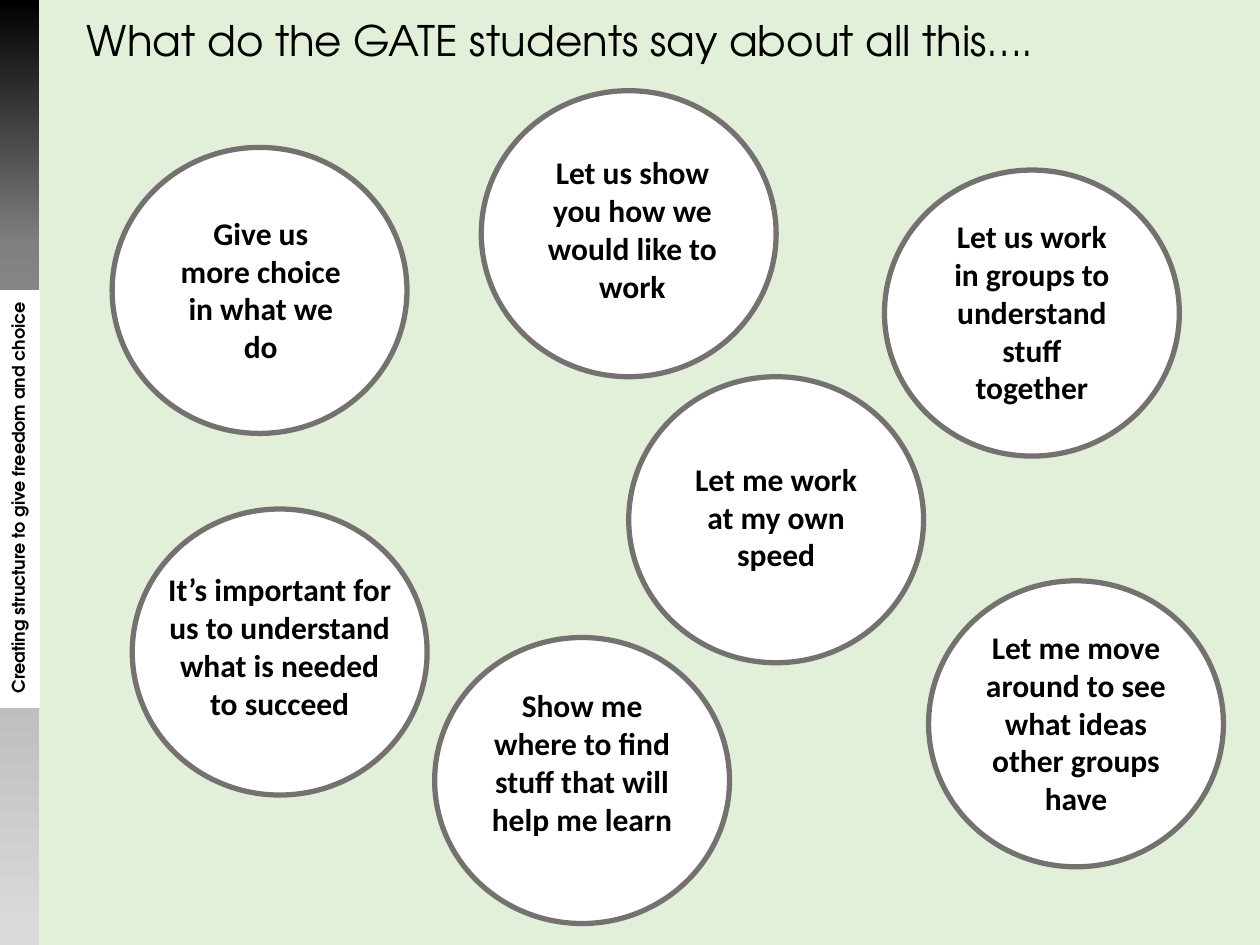
from copy import deepcopy
from dataclasses import dataclass

from pptx import Presentation
from pptx import util as u
from pptx.dml.color import RGBColor
from pptx.enum import shapes, text
from pptx.oxml.ns import qn


@dataclass(frozen=True)
class Theme:
    backdrop: str = "E2F0D9"
    paper: str = "FFFFFF"
    outline: str = "767171"
    ink: str = "000000"
    heading_font: str = "TeX Gyre Adventor"
    body_font: str = "Calibri"
    title_size: int = 24
    quote_size: int = 18
    motto_size: int = 10
    hairline: int = 1
    ring: int = 3
    strip: tuple = ((0, "000000"), (0.26, "808080"), (0.55, "A8A7A7"), (0.98, "D9D9D9"))


THEME = Theme()
COLUMNS, ROWS = 100, 75
CELL = u.Inches(0.1)
STRIP_WIDTH = 3.1
BUBBLE_WIDTH, BUBBLE_HEIGHT = 23.4, 22.7
LINE_ROWS, PADDING_ROWS = 3.05, 0.95

# bubble column, bubble row, text width, line count, text shift (columns, rows), words
QUOTES = [
    (8.9, 11.7, 15.4, 4, (0.1, 0), "Give us more choice in what we do"),
    (10.5, 40.4, 20.5, 4, (0, -0.4), "It’s important for us to understand what is needed to succeed"),
    (38.2, 7.2, 15.4, 4, (0.3, -0.3), "Let us show you how we would like to work"),
    (70.2, 13.5, 15.4, 5, (0, 0), "Let us work in groups to understand stuff together"),
    (49.9, 29.9, 15.4, 3, (0, -0.2), "Let me work at my own speed"),
    (34.5, 50.6, 17.6, 4, (0, -1.4), "Show me where to find stuff that will help me learn"),
    (73.7, 46.1, 16.7, 5, (0, 0), "Let me move around to see what ideas other groups have"),
]


def rgb(code):
    return RGBColor.from_string(code)


def cells(*counts):
    return [round(count * CELL) for count in counts]


def add_panel(page, kind, place, fill=None, line=None, weight=0):
    panel = page.shapes.add_shape(kind, *cells(*place))
    panel.shadow.inherit = False
    if fill:
        panel.fill.solid()
        panel.fill.fore_color.rgb = rgb(fill)
    if line:
        panel.line.color.rgb = rgb(line)
        panel.line.width = u.Pt(weight)
    else:
        panel.line.fill.background()
    return panel


def shade_downwards(panel, stops):
    panel.fill.gradient()
    panel.fill.gradient_angle = 270
    stop_list = panel.element.spPr.find(qn("a:gradFill")).find(qn("a:gsLst"))
    while len(stop_list) < len(stops):
        stop_list.append(deepcopy(stop_list[0]))
    for stop, (position, code) in zip(panel.fill.gradient_stops, stops):
        stop.position = position
        stop.color.rgb = rgb(code)


def add_words(page, words, place, font, size, bold=False, align=None, rotation=0):
    box = page.shapes.add_textbox(*cells(*place))
    box.rotation = rotation
    frame = box.text_frame
    frame.word_wrap = True
    frame.auto_size = text.MSO_AUTO_SIZE.SHAPE_TO_FIT_TEXT
    para = frame.paragraphs[0]
    para.text = words
    para.alignment = align
    para.font.name = font
    para.font.size = u.Pt(size)
    para.font.bold = bold
    para.font.color.rgb = rgb(THEME.ink)


def add_quote(page, column, row, width, lines, shift, words):
    add_panel(page, shapes.MSO_SHAPE.OVAL, (column, row, BUBBLE_WIDTH, BUBBLE_HEIGHT),
              THEME.paper, THEME.outline, THEME.ring)
    height = lines * LINE_ROWS + PADDING_ROWS
    left = column + (BUBBLE_WIDTH - width) / 2 + shift[0]
    top = row + (BUBBLE_HEIGHT - height) / 2 + shift[1]
    add_words(page, words, (left, top, width, height), THEME.body_font,
              THEME.quote_size, True, text.PP_ALIGN.CENTER)


def add_sidebar(page):
    rectangle = shapes.MSO_SHAPE.RECTANGLE
    strip = add_panel(page, rectangle, (0, 0, STRIP_WIDTH, ROWS))
    shade_downwards(strip, THEME.strip)
    add_panel(page, rectangle, (0, 23.1, STRIP_WIDTH, 33), THEME.paper, THEME.paper, THEME.hairline)
    add_words(page, "Creating structure to give freedom and choice", (-14, 36.2, 33.9, 5.7),
              THEME.heading_font, THEME.motto_size, True, rotation=270)


def main():
    deck = Presentation()
    deck.slide_width, deck.slide_height = cells(COLUMNS, ROWS)
    page = deck.slides.add_slide(deck.slide_layouts[6])
    add_panel(page, shapes.MSO_SHAPE.RECTANGLE, (STRIP_WIDTH, 0, COLUMNS - STRIP_WIDTH, ROWS),
              THEME.backdrop, THEME.backdrop, THEME.hairline)
    add_sidebar(page)
    add_words(page, "What do the GATE students say about all this….", (5.9, 0.7, 88.5, 5),
              THEME.heading_font, THEME.title_size)
    for quote in QUOTES:
        add_quote(page, *quote)
    deck.save("out.pptx")


if __name__ == "__main__":
    main()
